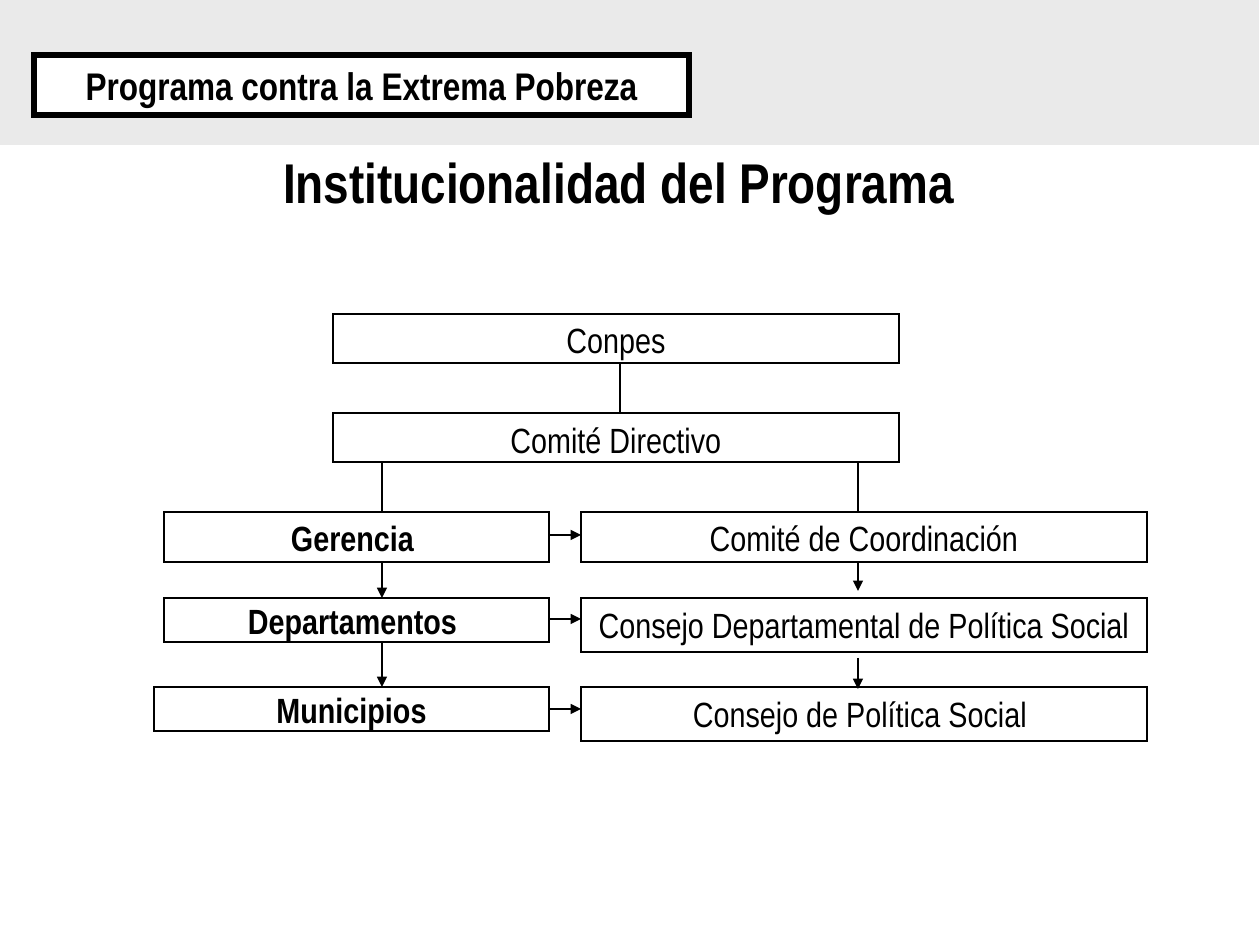
from dataclasses import dataclass

from pptx import Presentation
from pptx.dml.color import RGBColor
from pptx.enum.shapes import MSO_CONNECTOR, MSO_SHAPE
from pptx.enum.text import MSO_ANCHOR, PP_ALIGN
from pptx.oxml.ns import qn
from pptx.util import Emu, Pt
from lxml.etree import SubElement

PIXELS_PER_INCH = 126
LABEL_HEIGHT = 43  # one line of box text, down to its descenders
LABEL_INSET = 5


@dataclass(frozen=True)
class Theme:
    font: str = "Arial Narrow"
    ink: RGBColor = RGBColor(0, 0, 0)
    paper: RGBColor = RGBColor(255, 255, 255)
    band: RGBColor = RGBColor(0xEA, 0xEA, 0xEA)
    title_size: int = 32
    banner_size: int = 22
    box_size: int = 20
    thin_line: float = 0.75
    banner_line: float = 3


@dataclass(frozen=True)
class Box:
    text: str
    left: int
    top: int
    width: int
    height: int
    bold: bool = False


@dataclass(frozen=True)
class Link:
    start: tuple[int, int]
    end: tuple[int, int]
    arrow: bool = False


THEME = Theme()


def px(length: int) -> Emu:
    return Emu(round(length * 914400 / PIXELS_PER_INCH))


def write(frame, text: str, size: int, bold: bool) -> None:
    paragraph = frame.paragraphs[0]
    paragraph.alignment = PP_ALIGN.CENTER
    run = paragraph.add_run()
    run.text = text
    run.font.name = THEME.font
    run.font.size = Pt(size)
    run.font.bold = bold
    run.font.color.rgb = THEME.ink


def add_rectangle(slide, box: Box, fill: RGBColor, line: float = 0):
    shape = slide.shapes.add_shape(MSO_SHAPE.RECTANGLE, px(box.left), px(box.top),
                                   px(box.width), px(box.height))
    shape.shadow.inherit = False
    shape.fill.solid()
    shape.fill.fore_color.rgb = fill
    if line:
        shape.line.color.rgb = THEME.ink
        shape.line.width = Pt(line)
        SubElement(shape.line._get_or_add_ln(), qn("a:miter"), lim="800000")
    else:
        shape.line.fill.background()
    return shape


def add_box(slide, box: Box) -> None:
    frame = add_rectangle(slide, box, THEME.paper, THEME.thin_line).text_frame
    frame.word_wrap = True
    frame.vertical_anchor = MSO_ANCHOR.TOP
    frame.margin_top = px(min(LABEL_INSET, box.height - LABEL_HEIGHT))
    frame.margin_bottom = 0
    write(frame, box.text, THEME.box_size, box.bold)


def add_link(slide, link: Link) -> None:
    connector = slide.shapes.add_connector(MSO_CONNECTOR.STRAIGHT,
                                           *map(px, link.start + link.end))
    connector.line.color.rgb = THEME.ink
    connector.line.width = Pt(THEME.thin_line)
    if link.arrow:
        SubElement(connector.line._get_or_add_ln(), qn("a:tailEnd"), type="triangle")
    SubElement(connector._element.spPr, qn("a:effectLst"))


# Organisation chart: shared columns, then boxes and links
WIDE, CENTER_LEFT, RIGHT_LEFT = 566, 333, 581
LEFT_EDGE, LEFT_END = 164, 549
LEFT_WIDTH = LEFT_END - LEFT_EDGE
LEFT_AXIS, CENTER_AXIS, RIGHT_AXIS = 382, 620, 858
ROWS = (314, 413, 512, 598, 687)

BOXES = (
    Box("Conpes", CENTER_LEFT, ROWS[0], WIDE, 49),
    Box("Comité Directivo", CENTER_LEFT, ROWS[1], WIDE, 49),
    Box("Gerencia ", LEFT_EDGE, ROWS[2], LEFT_WIDTH, 50, True),
    Box("Comité de Coordinación", RIGHT_LEFT, ROWS[2], WIDE, 50),
    Box("Departamentos ", LEFT_EDGE, ROWS[3], LEFT_WIDTH, 44, True),
    Box("Consejo Departamental de Política Social", RIGHT_LEFT, ROWS[3], WIDE, 54),
    Box("Municipios", LEFT_EDGE - 10, ROWS[4], LEFT_WIDTH + 10, 44, True),
    Box("Consejo de Política Social ", RIGHT_LEFT, ROWS[4], WIDE, 54),
)

LINKS = (
    Link((CENTER_AXIS, 363), (CENTER_AXIS, ROWS[1])),
    *(Link((axis, 462), (axis, ROWS[2])) for axis in (LEFT_AXIS, RIGHT_AXIS)),
    Link((LEFT_AXIS, 562), (LEFT_AXIS, ROWS[3]), True),
    Link((LEFT_AXIS, 642), (LEFT_AXIS, ROWS[4]), True),
    Link((RIGHT_AXIS, 562), (RIGHT_AXIS, 591), True),
    Link((RIGHT_AXIS, 658), (RIGHT_AXIS, 689), True),
    *(Link((LEFT_END, y), (RIGHT_LEFT, y), True) for y in (535, 619, 709)),
)


def main() -> None:
    presentation = Presentation()
    presentation.slide_width, presentation.slide_height = px(1260), px(945)
    slide = presentation.slides.add_slide(presentation.slide_layouts[5])

    # Header band, behind everything else
    band = add_rectangle(slide, Box("", 0, -4, 1259, 149), THEME.band)
    slide.shapes._spTree.insert(2, band._element)

    # Title
    title = slide.shapes.title
    title.left, title.top, title.width, title.height = map(px, (103, 133, 1032, 97))
    title.text_frame.vertical_anchor = MSO_ANCHOR.MIDDLE
    write(title.text_frame, "Institucionalidad del Programa", THEME.title_size, True)

    # Chart
    for box in BOXES:
        add_box(slide, box)
    for link in LINKS:
        add_link(slide, link)

    # Programme banner
    banner = Box("Programa contra la Extrema Pobreza", 34, 55, 655, 60, True)
    frame = add_rectangle(slide, banner, THEME.paper, THEME.banner_line).text_frame
    frame.word_wrap = False
    frame.vertical_anchor = MSO_ANCHOR.MIDDLE
    write(frame, banner.text, THEME.banner_size, banner.bold)

    presentation.save("out.pptx")


if __name__ == "__main__":
    main()
